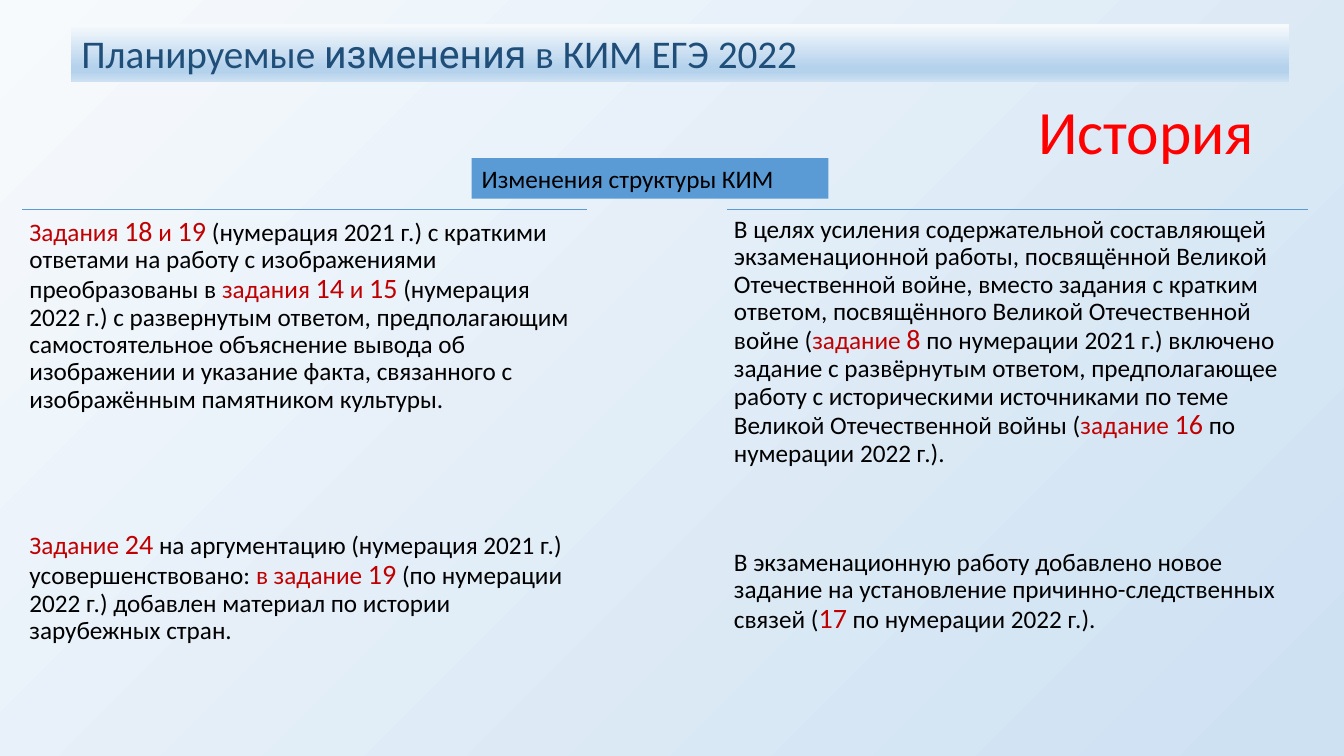
from copy import deepcopy
from itertools import groupby

from pptx import Presentation
from pptx.dml.color import RGBColor
from pptx.enum.shapes import MSO_CONNECTOR, MSO_SHAPE
from pptx.enum.text import MSO_ANCHOR, PP_ALIGN
from pptx.oxml.ns import qn
from pptx.util import Pt

LEFT = PP_ALIGN.LEFT
TOP, MIDDLE = MSO_ANCHOR.TOP, MSO_ANCHOR.MIDDLE
RECTANGLE = MSO_SHAPE.RECTANGLE
STRAIGHT = MSO_CONNECTOR.STRAIGHT

FONT = "Calibri"
RED, DARK_RED, NAVY, BLUE, BLACK = "FF0000", "C00000", "1F4E79", "5B9BD5", "000000"
PALE, SKY, MIST = "F7FAFD", "B5D2EC", "CEE1F2"
TEXT_SIZE, NUMBER_SIZE = 18, 20

SUBJECT = "История"
HEADING = [("Планируемые ", FONT), ("изменения", "Roboto"), (" в КИМ ЕГЭ 2022", FONT)]
SUBHEADING = "Изменения структуры КИМ"

# In each paragraph, plain and highlighted pieces alternate, plain first.
LEFT_COLUMN = [
    ["", "Задания 18 и 19",
     " (нумерация 2021 г.) с краткими ответами на работу с изображениями преобразованы в ",
     "задания 14 и 15",
     " (нумерация 2022 г.) с развернутым ответом, предполагающим самостоятельное "
     "объяснение вывода об изображении и указание факта, связанного с изображённым "
     "памятником культуры."],
    ["", "Задание 24", " на аргументацию (нумерация 2021 г.) усовершенствовано: ",
     "в задание 19",
     " (по нумерации 2022 г.) добавлен материал по истории зарубежных стран."],
]
RIGHT_COLUMN = [
    ["В целях усиления содержательной составляющей экзаменационной работы, посвящённой "
     "Великой Отечественной войне, вместо задания с кратким ответом, посвящённого "
     "Великой Отечественной войне (",
     "задание 8",
     " по нумерации 2021 г.) включено задание с развёрнутым ответом, предполагающее "
     "работу с историческими источниками по теме Великой Отечественной войны (",
     "задание 16", " по нумерации 2022 г.)."],
    ["В экзаменационную работу добавлено новое задание на установление "
     "причинно-следственных связей (",
     "17", " по нумерации 2022 г.)."],
]
# left, width, gap between paragraphs, paragraphs
COLUMNS = [(15.84, 403.2, 83.5, LEFT_COLUMN), (519.12, 415.44, 58.5, RIGHT_COLUMN)]
COLUMN_TOP, COLUMN_HEIGHT, COLUMN_INSET = 149.76, 377, 5.2


def color(hex_code):
    return RGBColor.from_string(hex_code)


def style(font, size, hex_code, name=FONT):
    font.size, font.name = Pt(size), name
    font.color.rgb = color(hex_code)


def fill_gradient(fill, element, stops, angle):
    """Fill with (position, colour) stops; element is the XML that holds the fill."""
    fill.gradient()
    fill.gradient_angle = angle
    stop_list = next(element.iter(qn("a:gsLst")))
    for _ in stops[2:]:
        stop_list.append(deepcopy(stop_list[0]))
    for stop, (position, hex_code) in zip(fill.gradient_stops, stops):
        stop.position = position
        stop.color.rgb = color(hex_code)


def add_bar(slide, left, top, width, height):
    """Add a borderless rectangle for one line of left-aligned text."""
    bar = slide.shapes.add_shape(RECTANGLE, Pt(left), Pt(top), Pt(width), Pt(height))
    bar.shadow.inherit = False
    bar.line.fill.background()
    bar.text_frame.word_wrap = True
    bar.text_frame.vertical_anchor = TOP
    paragraph = bar.text_frame.paragraphs[0]
    paragraph.alignment = LEFT
    return bar, paragraph


def add_pieces(paragraph, pieces):
    """Write alternating plain and highlighted pieces, highlighted numbers larger."""
    for index, piece in enumerate(pieces):
        highlighted = index % 2 == 1
        for is_number, characters in groupby(piece, lambda c: highlighted and c.isdigit()):
            run = paragraph.add_run()
            run.text = "".join(characters)
            style(run.font, NUMBER_SIZE if is_number else TEXT_SIZE,
                  DARK_RED if highlighted else BLACK)


def add_column(slide, left, width, gap, paragraphs):
    rule = slide.shapes.add_connector(
        STRAIGHT, Pt(left), Pt(COLUMN_TOP), Pt(left + width), Pt(COLUMN_TOP))
    rule.line.color.rgb = color(BLUE)
    rule.line.width = Pt(0.5)
    rule._element.spPr.append(rule._element.makeelement(qn("a:effectLst"), {}))

    box = slide.shapes.add_textbox(Pt(left), Pt(COLUMN_TOP), Pt(width), Pt(COLUMN_HEIGHT))
    frame = box.text_frame
    frame.word_wrap = True
    frame.margin_left = frame.margin_right = Pt(COLUMN_INSET)
    frame.margin_top = frame.margin_bottom = Pt(COLUMN_INSET)
    for index, pieces in enumerate(paragraphs):
        paragraph = frame.add_paragraph() if index else frame.paragraphs[0]
        paragraph.line_spacing = 0.9
        paragraph.space_before = Pt(gap if index else 0)
        add_pieces(paragraph, pieces)


def main():
    presentation = Presentation()
    presentation.slide_width, presentation.slide_height = Pt(960), Pt(540)
    slide = presentation.slides.add_slide(presentation.slide_layouts[5])
    fill_gradient(slide.background.fill, slide._element, [(0, PALE), (0.97, MIST)], 315)

    title = slide.shapes.title
    title.left, title.top, title.width, title.height = Pt(734.4), Pt(67.68), Pt(225.6), Pt(56.88)
    title.text_frame.text = SUBJECT
    title.text_frame.vertical_anchor = MIDDLE
    paragraph = title.text_frame.paragraphs[0]
    paragraph.alignment, paragraph.line_spacing = LEFT, 0.9
    style(paragraph.font, 44, RED)

    heading_bar, paragraph = add_bar(slide, 51, 17.28, 870, 41.2)
    fill_gradient(heading_bar.fill, heading_bar._element,
                  [(0, PALE), (0.74, SKY), (0.83, SKY), (1, MIST)], 270)
    for text, font_name in HEADING:
        run = paragraph.add_run()
        run.text = text
        style(run.font, 28, NAVY, font_name)

    subheading_bar, paragraph = add_bar(slide, 336.96, 113, 254.9, 29)
    subheading_bar.fill.solid()
    subheading_bar.fill.fore_color.rgb = color(BLUE)
    paragraph.text = SUBHEADING
    style(paragraph.font, TEXT_SIZE, BLACK)

    for column in COLUMNS:
        add_column(slide, *column)
    presentation.save("out.pptx")


if __name__ == "__main__":
    main()
